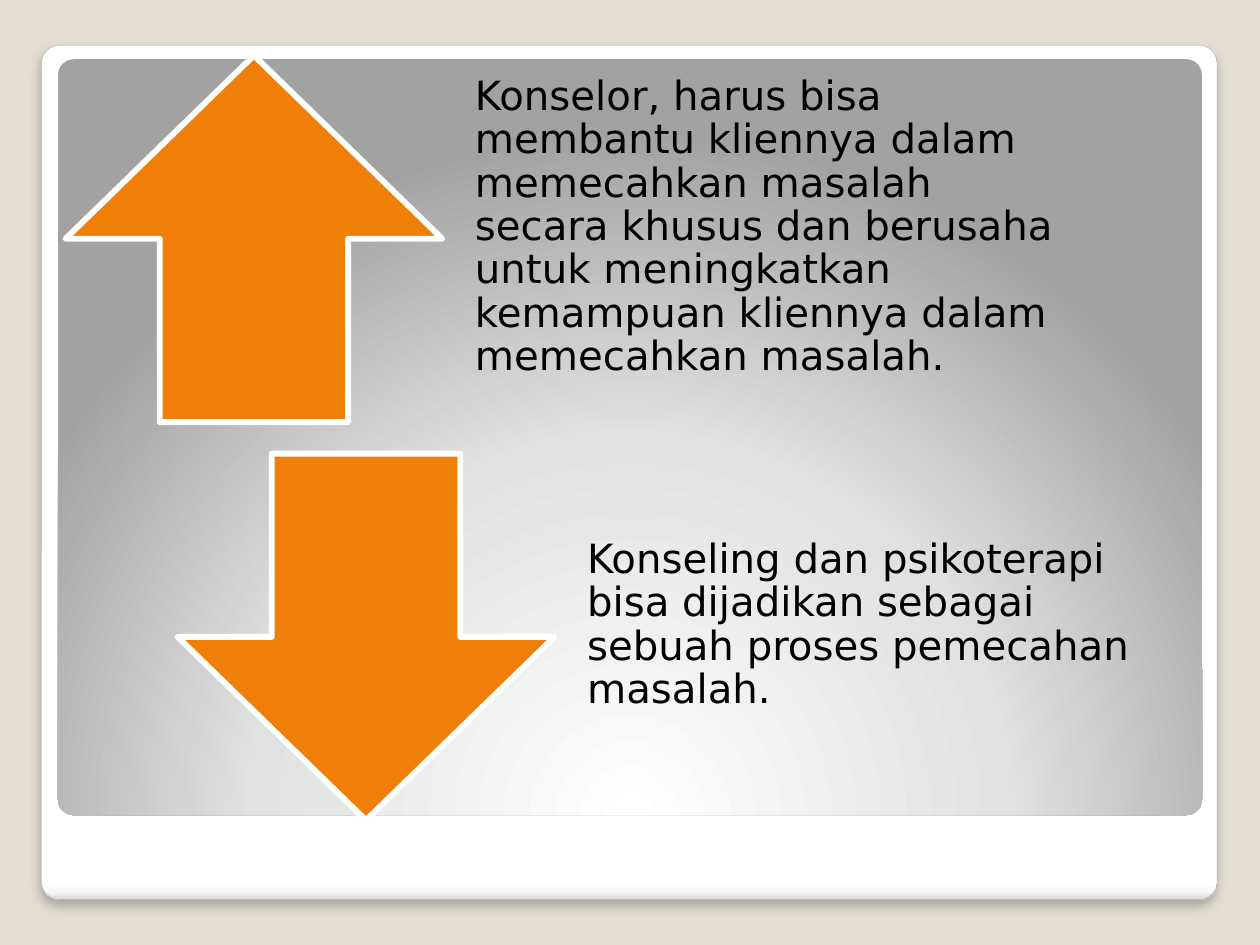
from lxml.etree import SubElement
from pptx import Presentation
from pptx.dml.color import RGBColor
from pptx.enum.shapes import MSO_SHAPE
from pptx.enum.text import MSO_ANCHOR, PP_ALIGN
from pptx.oxml.ns import qn
from pptx.util import Inches, Pt

BEIGE = RGBColor(0xE3, 0xDE, 0xD1)
WHITE = RGBColor(0xFF, 0xFF, 0xFF)
OFF_WHITE = RGBColor(0xF7, 0xF7, 0xF7)
PALE_GRAY = RGBColor(0xE1, 0xE1, 0xE1)
EDGE_GRAY = RGBColor(0xDA, 0xDA, 0xDA)
LINE_GRAY = RGBColor(0xA4, 0xA4, 0xA4)
MID_GRAY = RGBColor(0xA2, 0xA2, 0xA2)
ORANGE = RGBColor(0xF0, 0x7F, 0x09)
BLACK = RGBColor(0, 0, 0)
FONT = "DejaVu Sans"
ARROW_WIDTH, ROW_HEIGHT = 2.99, 2.91
TEXT_GAP, TEXT_WIDTH = 0.08, 5.07

POINTS = [
    (MSO_SHAPE.UP_ARROW, 0.52, 0.44,
     "Konselor, harus bisa membantu kliennya dalam memecahkan masalah secara khusus "
     "dan berusaha untuk meningkatkan kemampuan kliennya dalam memecahkan masalah."),
    (MSO_SHAPE.DOWN_ARROW, 1.41, 3.6,
     "Konseling dan psikoterapi bisa dijadikan sebagai sebuah proses pemecahan masalah."),
]


def add_gradient(shape, stops):
    shape.fill.gradient()
    gradient = shape._element.spPr.find(qn("a:gradFill"))
    for child in list(gradient):
        gradient.remove(child)
    stop_list = SubElement(gradient, qn("a:gsLst"))
    for position, color in stops:
        stop = SubElement(stop_list, qn("a:gs"), pos=str(position * 1000))
        SubElement(stop, qn("a:srgbClr"), val=str(color))
    return gradient


def add_rounded_panel(slide, left, top, width, height):
    panel = slide.shapes.add_shape(
        MSO_SHAPE.ROUNDED_RECTANGLE,
        Inches(left), Inches(top), Inches(width), Inches(height))
    panel.adjustments[0] = 0.021
    panel.shadow.inherit = False
    return panel


def add_card(slide, left, top, width, height):
    card = add_rounded_panel(slide, left, top, width, height)
    gradient = add_gradient(
        card, [(0, WHITE), (98, WHITE), (99, OFF_WHITE), (100, EDGE_GRAY)])
    SubElement(gradient, qn("a:lin"), ang="5400000", scaled="0")
    card.line.color.rgb = LINE_GRAY
    card.line.width = Pt(0.16)
    effects = card._element.spPr.find(qn("a:effectLst"))
    shadow = SubElement(effects, qn("a:outerShdw"), blurRad=str(Pt(6)),
                        dist=str(Pt(4)), dir="5400000", rotWithShape="0")
    shadow_color = SubElement(shadow, qn("a:srgbClr"), val=str(BLACK))
    SubElement(shadow_color, qn("a:alpha"), val="25000")


def add_backdrop(slide, left, top, width, height):
    backdrop = add_rounded_panel(slide, left, top, width, height)
    gradient = add_gradient(backdrop, [(0, WHITE), (55, PALE_GRAY), (100, MID_GRAY)])
    circle = SubElement(gradient, qn("a:path"))
    circle.set("path", "circle")
    SubElement(circle, qn("a:fillToRect"), l="50000", t="175000", r="50000", b="-75000")
    backdrop.line.fill.background()


def add_point(slide, arrow_kind, left, top, statement):
    arrow = slide.shapes.add_shape(
        arrow_kind, Inches(left), Inches(top), Inches(ARROW_WIDTH), Inches(ROW_HEIGHT))
    arrow.shadow.inherit = False
    arrow.fill.solid()
    arrow.fill.fore_color.rgb = ORANGE
    arrow.line.color.rgb = WHITE
    arrow.line.width = Pt(3.35)

    caption = slide.shapes.add_textbox(
        Inches(left + ARROW_WIDTH + TEXT_GAP), Inches(top),
        Inches(TEXT_WIDTH), Inches(ROW_HEIGHT))
    frame = caption.text_frame
    frame.word_wrap = True
    frame.vertical_anchor = MSO_ANCHOR.MIDDLE
    frame.margin_top = 0
    frame.margin_left = frame.margin_right = frame.margin_bottom = Inches(0.18)
    frame.text = statement
    paragraph = frame.paragraphs[0]
    paragraph.alignment = PP_ALIGN.LEFT
    paragraph.line_spacing = 0.9
    font = paragraph.runs[0].font
    font.name = FONT
    font.size = Pt(23)
    font.color.rgb = BLACK


def main():
    presentation = Presentation()
    presentation.slide_width = Inches(10)
    presentation.slide_height = Inches(7.5)
    slide = presentation.slides.add_slide(presentation.slide_layouts[6])
    slide.background.fill.solid()
    slide.background.fill.fore_color.rgb = BEIGE
    add_card(slide, 0.33, 0.36, 9.33, 6.78)
    add_backdrop(slide, 0.46, 0.47, 9.08, 6)
    for point in POINTS:
        add_point(slide, *point)
    presentation.save("out.pptx")


if __name__ == "__main__":
    main()
